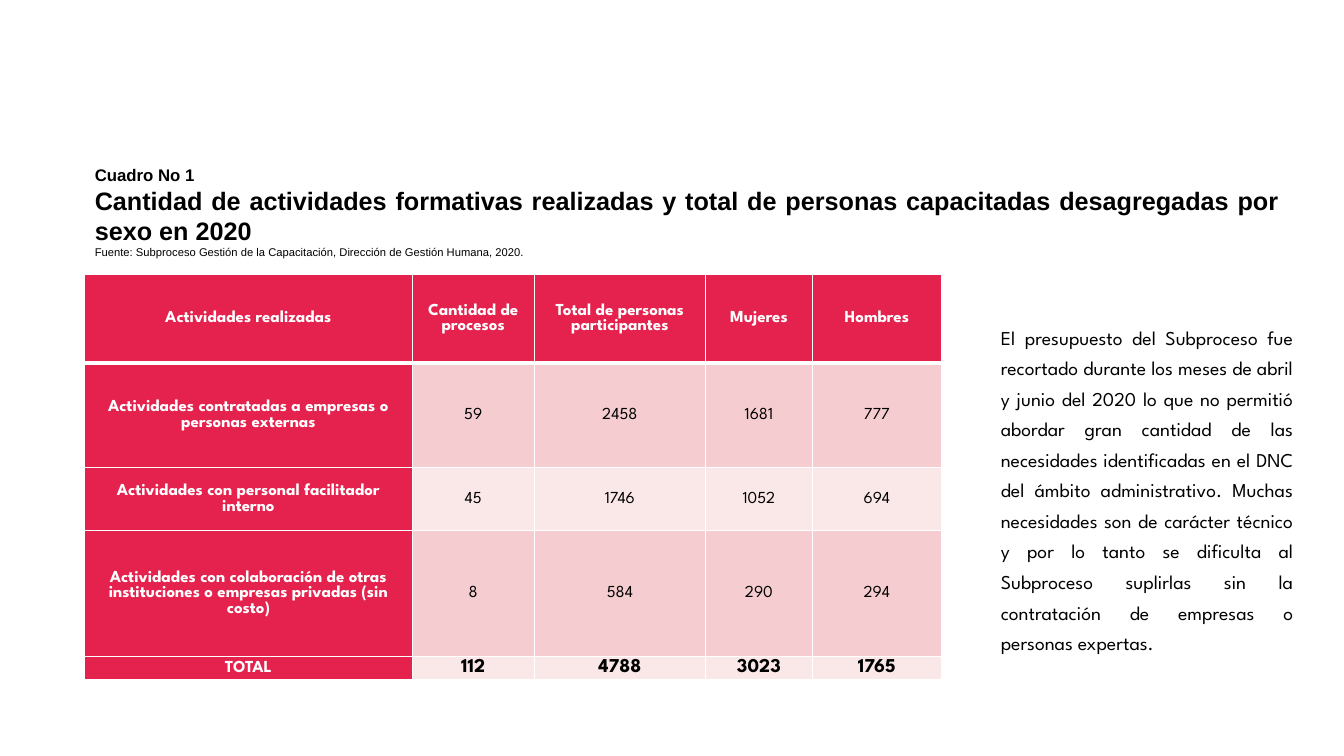
import pptx
import pptx.util
import pptx.dml.color
import pptx.enum.text
import pptx.oxml
import pptx.oxml.ns

Pt = pptx.util.Pt
RGBColor = pptx.dml.color.RGBColor
ALIGN = pptx.enum.text.PP_ALIGN
ANCHOR = pptx.enum.text.MSO_ANCHOR

CRIMSON = RGBColor(0xE5, 0x22, 0x4E)
ROSE = RGBColor(0xF5, 0xCD, 0xD0)
BLUSH = RGBColor(0xFA, 0xE8, 0xE9)
WHITE = RGBColor(0xFF, 0xFF, 0xFF)
BLACK = RGBColor(0x00, 0x00, 0x00)

HEADING = [
    ("Cuadro No 1", 12, True),
    ("Cantidad de actividades formativas realizadas y total de personas "
     "capacitadas desagregadas por sexo en 2020", 18, True),
    ("Fuente: Subproceso Gestión de la Capacitación, Dirección de Gestión "
     "Humana, 2020.", 8, False),
]
COLUMNS = [234, 87.1, 122.4, 76.3, 92.2]
HEIGHTS = [63.3, 74.9, 44.7, 90, 16.5]
ROWS = [
    ("Actividades realizadas", "Cantidad de procesos",
     "Total de personas participantes", "Mujeres", "Hombres"),
    ("Actividades contratadas a empresas o personas externas",
     "59", "2458", "1681", "777"),
    ("Actividades con personal facilitador interno",
     "45", "1746", "1052", "694"),
    ("Actividades con colaboración de otras instituciones o empresas "
     "privadas (sin costo)", "8", "584", "290", "294"),
    ("TOTAL", "112", "4788", "3023", "1765"),
]
BUDGET_NOTE = (
    "El presupuesto del Subproceso fue recortado durante los meses de abril y "
    "junio del 2020 lo que no permitió abordar gran cantidad de las "
    "necesidades identificadas en el DNC del ámbito administrativo. Muchas "
    "necesidades son de carácter técnico y por lo tanto se dificulta al "
    "Subproceso suplirlas sin la contratación de empresas o personas expertas."
)


class SlideBuilder:
    heading_font = "Arial"
    body_font = "League Spartan"

    def __init__(self, slide):
        self.slide = slide

    def format(self, p, name, size, color=BLACK, bold=False, align=ALIGN.JUSTIFY):
        p.alignment = align
        p.font.name = name
        p.font.size = Pt(size)
        p.font.bold = bold
        p.font.color.rgb = color

    def title(self, x, y, w, h, lines):
        sp = self.slide.shapes.title
        sp.left, sp.top, sp.width, sp.height = Pt(x), Pt(y), Pt(w), Pt(h)
        tf = sp.text_frame
        tf.word_wrap = True
        tf.auto_size = pptx.enum.text.MSO_AUTO_SIZE.NONE
        tf.vertical_anchor = ANCHOR.MIDDLE
        tf.text = "\n".join(text for text, size, bold in lines)
        for p, (text, size, bold) in zip(tf.paragraphs, lines):
            self.format(p, self.heading_font, size, bold=bold)

    def text(self, x, y, w, h, text, size, spacing):
        tf = self.slide.shapes.add_textbox(Pt(x), Pt(y), Pt(w), Pt(h)).text_frame
        tf.word_wrap = True
        p = tf.paragraphs[0]
        p.text = text
        p.line_spacing = spacing
        self.format(p, self.body_font, size)

    def borders(self, cell, bottom):
        tcPr = cell._tc.get_or_add_tcPr()
        for side, width in (("L", 1), ("R", 1), ("T", 1), ("B", bottom)):
            tcPr.append(pptx.oxml.parse_xml(
                f'<a:ln{side} {pptx.oxml.ns.nsdecls("a")} w="{Pt(width)}">'
                f'<a:solidFill><a:srgbClr val="{WHITE}"/></a:solidFill></a:ln{side}>'))

    def cell(self, cell, text, fill, color, bold, size, bottom):
        self.borders(cell, bottom)
        cell.fill.solid()
        cell.fill.fore_color.rgb = fill
        cell.vertical_anchor = ANCHOR.MIDDLE
        cell.margin_left = cell.margin_right = Pt(3.6)
        cell.margin_top, cell.margin_bottom = Pt(0.7), Pt(0)
        cell.text = text
        self.format(cell.text_frame.paragraphs[0], self.body_font, size,
                    color, bold, ALIGN.CENTER)

    def table(self, x, y, columns, heights, rows):
        table = self.slide.shapes.add_table(
            len(rows), len(columns), Pt(x), Pt(y),
            Pt(sum(columns)), Pt(sum(heights))).table
        for column, width in zip(table.columns, columns):
            column.width = Pt(width)
        for row, height in zip(table.rows, heights):
            row.height = Pt(height)
        for i, row in enumerate(rows):
            total = i == len(rows) - 1
            for j, text in enumerate(row):
                label = i == 0 or j == 0
                band = ROSE if i % 2 else BLUSH
                self.cell(table.cell(i, j), text,
                          fill=CRIMSON if label else band,
                          color=WHITE if label else BLACK,
                          bold=label or total,
                          size=14 if total and not label else 12,
                          bottom=3 if i == 0 else 1)


def main():
    prs = pptx.Presentation()
    prs.slide_width, prs.slide_height = Pt(960), Pt(540)
    s = SlideBuilder(prs.slides.add_slide(prs.slide_layouts[5]))
    s.title(60.5, 113.8, 860.4, 74.9, HEADING)
    s.table(60.5, 195.8, COLUMNS, HEIGHTS, ROWS)
    s.text(707.8, 223.9, 223.2, 244.8, BUDGET_NOTE, 14, 1.3)
    prs.save("out.pptx")


if __name__ == "__main__":
    main()
